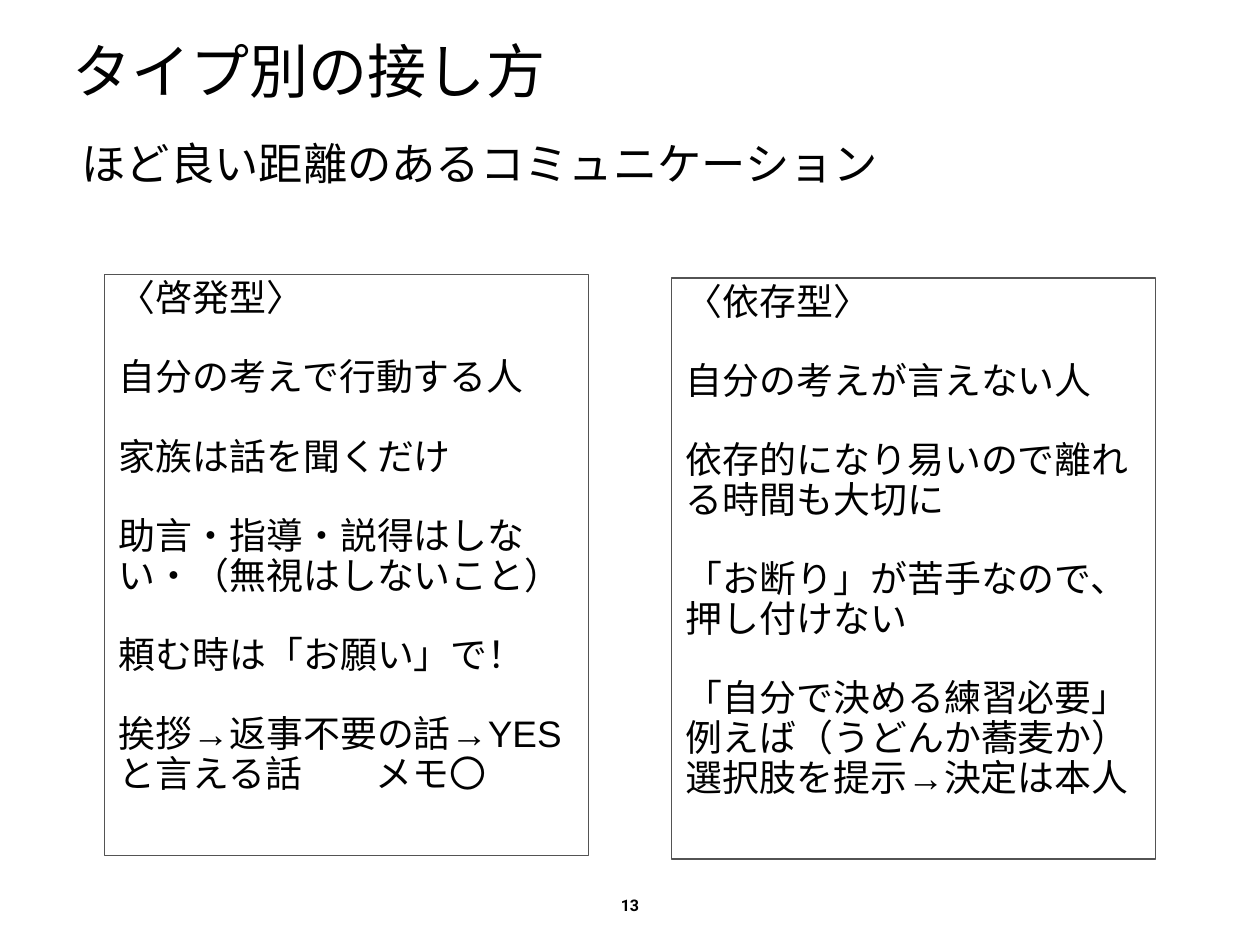
from collections import namedtuple
from lxml.etree import SubElement
from pptx import Presentation
from pptx.dml.color import RGBColor
from pptx.enum.shapes import MSO_SHAPE
from pptx.enum.text import MSO_ANCHOR, PP_ALIGN
from pptx.oxml.ns import qn
from pptx.util import Inches, Pt

HEADING = "タイプ別の接し方"
SUBHEADING = "ほど良い距離のあるコミュニケーション"
PAGE_NUMBER = "13"
TYPES = [
    [
        "〈啓発型〉",
        "自分の考えで行動する人",
        "家族は話を聞くだけ",
        "助言・指導・説得はしない・（無視はしないこと）",
        "頼む時は「お願い」で！",
        "挨拶→返事不要の話→YESと言える話　　メモ〇",
    ],
    [
        "〈依存型〉",
        "自分の考えが言えない人",
        "依存的になり易いので離れる時間も大切に",
        "「お断り」が苦手なので、押し付けない",
        "「自分で決める練習必要」例えば（うどんか蕎麦か）選択肢を提示→決定は本人",
    ],
]

Theme = namedtuple("Theme", "ink border font number_font heading subheading body number gap")
THEME = Theme(RGBColor(0, 0, 0), RGBColor(0x53, 0x53, 0x53), "Arial", "Roboto",
              48, 36, 30, 13, 32)

SLIDE_W, SLIDE_H = 14.22, 10.67
MARGIN, HEADING_W = 0.76, 12.69
PANEL_LEFT, PANEL_TOP, PANEL_W, PANEL_H = 1.18, 3.1, 5.46, 6.56
PANEL_STEP, PANEL_DROP = 6.4, 0.04
NUMBER_W, NUMBER_H, NUMBER_TOP = 0.33, 0.31, 10.08
INSET, INDENT = 0.06, 0.1


def write(holder, lines, size, font=THEME.font, spacing=0.9, indent=INDENT,
          align=PP_ALIGN.LEFT, anchor=MSO_ANCHOR.TOP, wrap=True, bold=False):
    frame = holder.text_frame
    frame.margin_left = frame.margin_right = Inches(INSET)
    frame.margin_top = frame.margin_bottom = Inches(INSET)
    frame.word_wrap = wrap
    frame.vertical_anchor = anchor
    frame.text = "\n".join(lines)
    for row, paragraph in enumerate(frame.paragraphs):
        paragraph.alignment = align
        paragraph.line_spacing = spacing
        paragraph.space_before = Pt(THEME.gap if row else 0)
        paragraph._p.get_or_add_pPr().set("marL", str(Inches(indent)))
        for run in paragraph.runs:
            run.font.size = Pt(size)
            run.font.name = font
            run.font.bold = bold
            run.font.color.rgb = THEME.ink
            SubElement(run._r.get_or_add_rPr(), qn("a:ea")).set("typeface", font)


def add_text(slide, box, lines, size, **style):
    write(slide.shapes.add_textbox(*map(Inches, box)), lines, size, **style)


def add_panel(slide, column, lines):
    box = (PANEL_LEFT + column * PANEL_STEP, PANEL_TOP + column * PANEL_DROP,
           PANEL_W, PANEL_H)
    panel = slide.shapes.add_shape(MSO_SHAPE.RECTANGLE, *map(Inches, box))
    panel.shadow.inherit = False
    panel.fill.background()
    panel.line.color.rgb = THEME.border
    panel.line.width = Pt(1)
    write(panel, lines, THEME.body)


def main():
    deck = Presentation()
    deck.slide_width, deck.slide_height = Inches(SLIDE_W), Inches(SLIDE_H)
    slide = deck.slides.add_slide(deck.slide_layouts[6])
    add_text(slide, (MARGIN, 0.48, HEADING_W, 1.06), [HEADING], THEME.heading,
             spacing=0.8, indent=0)
    add_text(slide, (MARGIN, 1.55, HEADING_W, 0.73), [SUBHEADING], THEME.subheading)
    for column, lines in enumerate(TYPES):
        add_panel(slide, column, lines)
    add_text(slide, ((SLIDE_W - NUMBER_W) / 2, NUMBER_TOP, NUMBER_W, NUMBER_H),
             [PAGE_NUMBER], THEME.number, font=THEME.number_font, spacing=1.0,
             indent=0, align=PP_ALIGN.CENTER, anchor=MSO_ANCHOR.BOTTOM,
             wrap=False, bold=True)
    deck.save("out.pptx")


if __name__ == "__main__":
    main()
